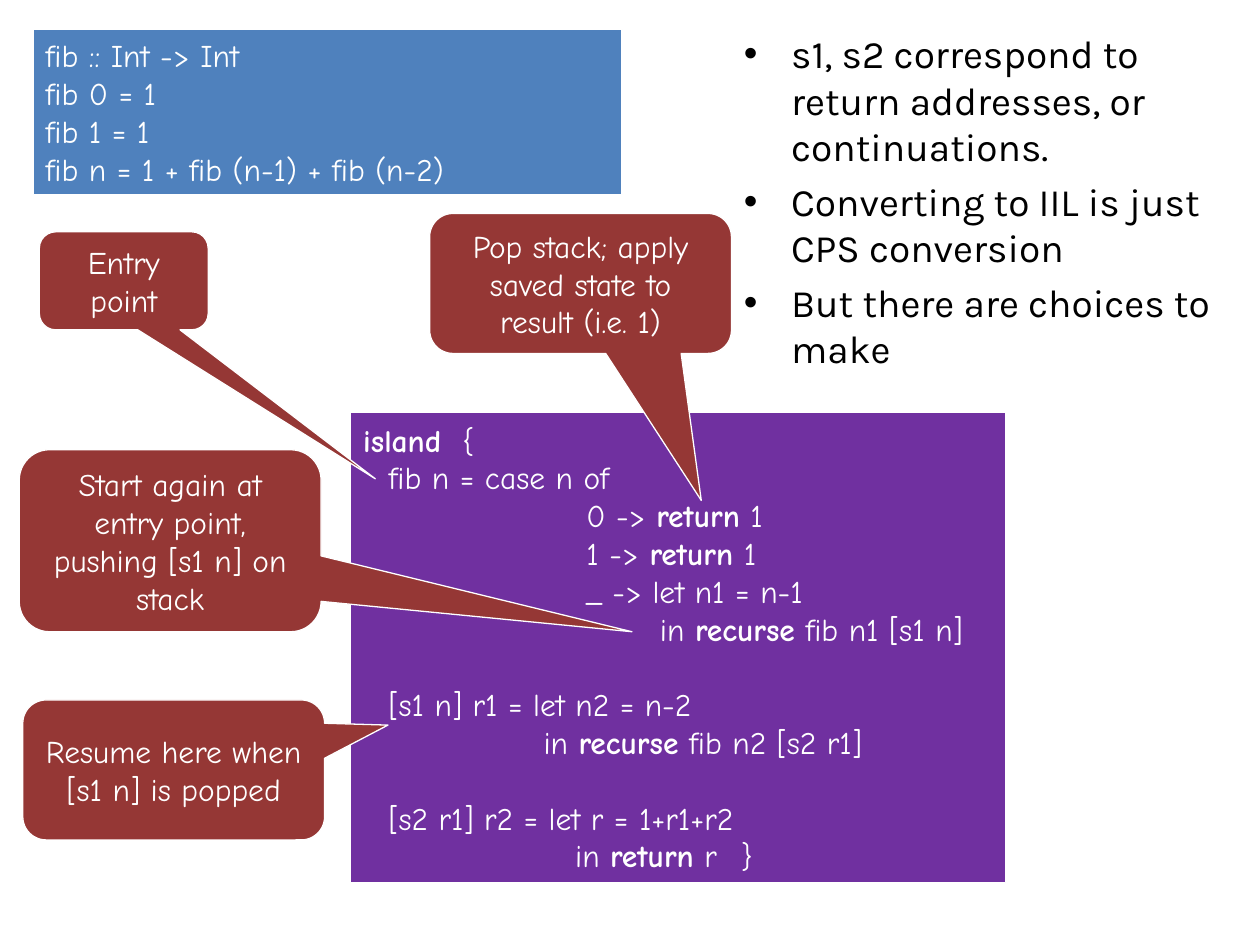
from lxml import etree
from pptx import Presentation
from pptx.dml.color import RGBColor
from pptx.enum.shapes import MSO_SHAPE
from pptx.enum.text import MSO_ANCHOR, PP_ALIGN
from pptx.oxml.ns import qn
from pptx.util import Pt

RECTANGLE = MSO_SHAPE.RECTANGLE
CALLOUT = MSO_SHAPE.ROUNDED_RECTANGULAR_CALLOUT
MIDDLE = MSO_ANCHOR.MIDDLE
LEFT, CENTER = PP_ALIGN.LEFT, PP_ALIGN.CENTER

COLORS = {"source": "4F81BD", "island": "7030A0", "callout": "953735",
          "light": "FFFFFF", "dark": "000000"}
CODE_FONT, BODY_FONT = "Comic Neue", "Karla"

# Tab stops of the island code, in points
CASE_TABS = (127.5,)
STATE_TABS = (14.5, 85, 127.5)

SOURCE_CODE = [
    ("fib :: Int -> Int", ()),
    ("fib 0 = 1", ()),
    ("fib 1 = 1", ()),
    ("fib n = 1 + fib (n-1) + fib (n-2)", ()),
]

# Keywords between asterisks are bold
ISLAND_CODE = [
    ("*island*  {", ()),
    ("\tfib n = case n of", (14.5,)),
    ("\t0 -> *return* 1", CASE_TABS),
    ("\t1 -> *return* 1", CASE_TABS),
    ("\t_ -> let n1 = n-1", CASE_TABS),
    ("\t       in *recurse* fib n1 [s1 n]", CASE_TABS),
    ("", CASE_TABS),
    ("\t[s1 n] r1 = let n2 = n-2", STATE_TABS),
    ("\t\t   in *recurse* fib n2 [s2 r1]", STATE_TABS),
    ("", STATE_TABS),
    ("\t[s2 r1] r2 = let r = 1+r1+r2", STATE_TABS),
    (" \t\t      in *return* r\t}", STATE_TABS),
]

# Text, box, and pointer tip relative to the box centre
CALLOUTS = [
    ("Entry point", (22.5, 132.5, 96.5, 56), (1.49, 2.02)),
    ("Start again at entry point, pushing [s1 n] on stack",
     (11, 257, 172.5, 104), (1.53, 0.5)),
    ("Pop stack; apply saved state to result (i.e. 1)",
     (245.5, 122, 172.5, 80), (0.4, 1.55)),
    ("Resume here when [s1 n] is popped",
     (13, 400, 172.5, 80), (0.71, -0.32)),
]

POINTS = [
    "s1, s2 correspond to return addresses, or continuations.",
    "Converting to IIL is just CPS conversion",
    "But there are choices to make",
]


def color(name):
    return RGBColor.from_string(COLORS[name])


def style(paragraph, font_name, size, color_name, alignment=LEFT):
    paragraph.alignment = alignment
    paragraph.font.name = font_name
    paragraph.font.size = Pt(size)
    paragraph.font.color.rgb = color(color_name)


def add_paragraphs(frame, count):
    return [frame.paragraphs[0]] + [frame.add_paragraph() for _ in range(count - 1)]


def add_panel(slide, kind, box, fill):
    shape = slide.shapes.add_shape(kind, *map(Pt, box))
    shape.shadow.inherit = False
    shape.fill.solid()
    shape.fill.fore_color.rgb = color(fill)
    shape.line.color.rgb = color("light")
    shape.line.width = Pt(0.75)
    shape.text_frame.word_wrap = True
    shape.text_frame.vertical_anchor = MIDDLE
    return shape


def add_code(slide, box, fill, lines):
    frame = add_panel(slide, RECTANGLE, box, fill).text_frame
    for paragraph, (line, tabs) in zip(add_paragraphs(frame, len(lines)), lines):
        if tabs:
            properties = paragraph._p.get_or_add_pPr()
            tab_list = etree.SubElement(properties, qn("a:tabLst"))
            for position in tabs:
                etree.SubElement(tab_list, qn("a:tab"), pos=str(Pt(position)), algn="l")
        for index, part in enumerate(line.split("*")):
            if part:
                run = paragraph.add_run()
                run.text = part
                if index % 2:
                    run.font.bold = True
        style(paragraph, CODE_FONT, 18, "light")


def add_callout(slide, box, text, tip):
    shape = add_panel(slide, CALLOUT, box, "callout")
    shape.adjustments[0], shape.adjustments[1] = tip
    shape.text_frame.text = text
    style(shape.text_frame.paragraphs[0], CODE_FONT, 18, "light", CENTER)


def add_bullets(slide, box, points):
    text_box = slide.shapes.add_textbox(*map(Pt, box))
    text_box.fill.solid()
    text_box.fill.fore_color.rgb = color("light")
    frame = text_box.text_frame
    frame.word_wrap = True
    for index, paragraph in enumerate(add_paragraphs(frame, len(points))):
        paragraph.text = points[index]
        properties = paragraph._p.get_or_add_pPr()
        properties.set("marL", str(Pt(27)))
        properties.set("indent", str(Pt(-27)))
        etree.SubElement(properties, qn("a:buFont"), typeface="Arial")
        etree.SubElement(properties, qn("a:buChar"), char="•")
        if index:
            paragraph.space_before = Pt(4.4)
        style(paragraph, BODY_FONT, 22.2, "dark")


def main():
    presentation = Presentation()
    presentation.slide_width, presentation.slide_height = Pt(720), Pt(540)
    slide = presentation.slides.add_slide(presentation.slide_layouts[6])

    # Haskell source and its island form
    add_code(slide, (19, 17, 336.5, 94), "source", SOURCE_CODE)
    add_code(slide, (200.5, 235.5, 374, 269), "island", ISLAND_CODE)

    # Callouts pointing into the island code
    for text, box, tip in CALLOUTS:
        add_callout(slide, box, text, tip)

    # Remarks
    add_bullets(slide, (418, 13.5, 302, 190), POINTS)

    presentation.save("out.pptx")


if __name__ == "__main__":
    main()
